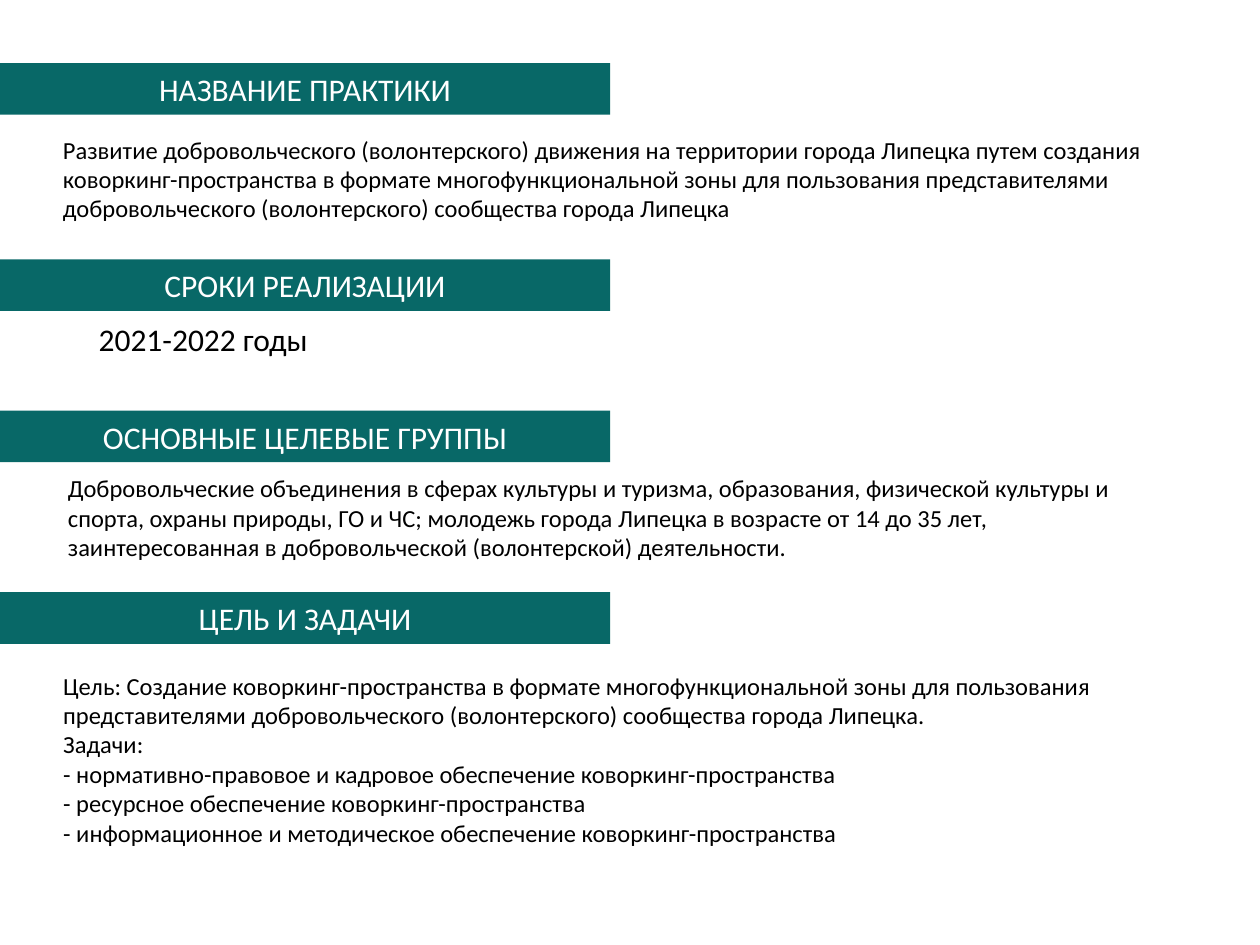
from pptx import Presentation
from pptx import util as u
from pptx.dml import color
from pptx.enum import shapes, text
from pptx.oxml import xmlchemy

COLORS = {"banner": "086867", "heading": "FFFFFF", "body": "000000"}
FONT = "Calibri"

SECTIONS = [
    ("СРОКИ РЕАЛИЗАЦИИ", 5.23),
    ("ОСНОВНЫЕ ЦЕЛЕВЫЕ ГРУППЫ", 8.28),
    ("ЦЕЛЬ И ЗАДАЧИ", 11.94),
]
PRACTICE = (
    "Развитие добровольческого (волонтерского) движения на территории города "
    "Липецка путем создания коворкинг-пространства в формате многофункциональной "
    "зоны для пользования представителями добровольческого (волонтерского) "
    "сообщества города Липецка"
)
PERIOD = "2021-2022 годы"
GROUPS = (
    "Добровольческие объединения в сферах культуры и туризма, образования, "
    "физической культуры и спорта, охраны природы, ГО и ЧС; молодежь города "
    "Липецка в возрасте от 14 до 35 лет, заинтересованная в добровольческой "
    "(волонтерской) деятельности."
)
GOALS = [
    "Цель: Создание коворкинг-пространства в формате многофункциональной зоны "
    "для пользования представителями добровольческого (волонтерского) "
    "сообщества города Липецка.",
    "Задачи:",
    "- нормативно-правовое и кадровое обеспечение коворкинг-пространства",
    "- ресурсное обеспечение коворкинг-пространства",
    "- информационное и методическое обеспечение коворкинг-пространства",
]


def rgb(name):
    return color.RGBColor.from_string(COLORS[name])


def place(sp, left, top, width, height):
    sp.left, sp.top = u.Cm(left), u.Cm(top)
    sp.width, sp.height = u.Cm(width), u.Cm(height)


def remove_bullet(p):
    props = p._p.get_or_add_pPr()
    props.set("marL", "0")
    props.set("indent", "0")
    props.append(xmlchemy.OxmlElement("a:buNone"))


def write(sp, lines, size, color_name, align=text.PP_ALIGN.LEFT, wrap=True):
    tf = sp.text_frame
    tf.word_wrap = wrap
    tf.auto_size = text.MSO_AUTO_SIZE.NONE
    for i, line in enumerate(lines):
        p = tf.paragraphs[0] if i == 0 else tf.add_paragraph()
        remove_bullet(p)
        p.alignment = align
        p.space_before = u.Pt(0)
        r = p.add_run()
        r.text = line
        r.font.name = FONT
        r.font.size = u.Pt(size)
        r.font.color.rgb = rgb(color_name)


def format_banner(sp, heading, top):
    place(sp, 0, top, 12.3, 1.04)
    sp.fill.solid()
    sp.fill.fore_color.rgb = rgb("banner")
    sp.line.fill.background()
    sp.text_frame.vertical_anchor = text.MSO_ANCHOR.MIDDLE
    write(sp, [heading], 18, "heading", text.PP_ALIGN.CENTER)


def add_banner(s, heading, top):
    sp = s.shapes.add_shape(shapes.MSO_SHAPE.RECTANGLE, 0, 0, 0, 0)
    sp.shadow.inherit = False
    format_banner(sp, heading, top)


def add_text(s, line, box, size=14, wrap=True):
    sp = s.shapes.add_textbox(0, 0, 0, 0)
    place(sp, *box)
    write(sp, [line], size, "body", wrap=wrap)


def main():
    prs = Presentation()
    prs.slide_width, prs.slide_height = u.Cm(25.4), u.Cm(19.05)
    s = prs.slides.add_slide(prs.slide_layouts[1])

    format_banner(s.shapes.title, "НАЗВАНИЕ ПРАКТИКИ", 1.27)
    for heading, top in SECTIONS:
        add_banner(s, heading, top)

    add_text(s, PRACTICE, (1.02, 2.59, 23.01, 2.06))
    add_text(s, PERIOD, (1.74, 6.33, 4.78, 1.02), size=18, wrap=False)
    add_text(s, GROUPS, (1.12, 9.42, 22.91, 2.06))

    goals = s.placeholders[1]
    place(goals, 1.02, 13.39, 22.91, 3.84)
    write(goals, GOALS, 14, "body")

    prs.save("out.pptx")


if __name__ == "__main__":
    main()
